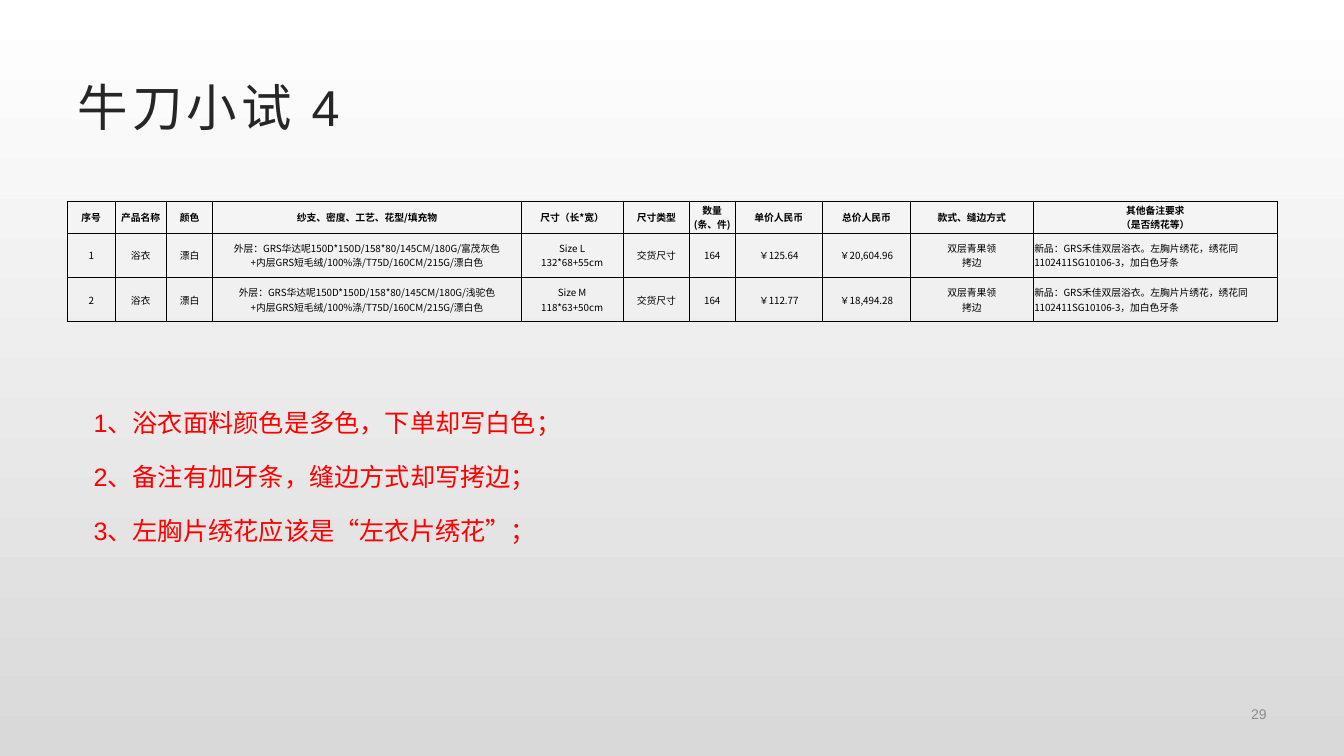
from lxml.etree import SubElement
from pptx import Presentation
from pptx.dml.color import RGBColor
from pptx.enum.text import MSO_ANCHOR, PP_ALIGN
from pptx.oxml.ns import qn
from pptx.util import Inches, Pt

COLORS = {"top": "FFFFFF", "base": "D9D9D9", "title": "262626",
          "note": "FF0000", "page": "8C8C8C", "ink": "000000"}
HEAD = ["序号", "产品名称", "颜色", "纱支、密度、工艺、花型/填充物", "尺寸（长*宽）",
        "尺寸类型", "数量\n(条、件)", "单价人民币", "总价人民币", "款式、缝边方式",
        "其他备注要求\n（是否绣花等）"]
# Colour, size, unit price, total price, embroidered part
ROBES = [
    ("富茂灰色", "Size L\n132*68+55cm", "￥125.64", "￥20,604.96", "左胸片"),
    ("浅驼色", "Size M\n118*63+50cm", "￥112.77", "￥18,494.28", "左胸片片"),
]
WIDTHS = [0.47, 0.51, 0.46, 3.06, 1.01, 0.66, 0.45, 0.87, 0.87, 1.22, 2.42]
HEIGHTS = [0.31, 0.44, 0.44]
NOTES = ["1、浴衣面料颜色是多色，下单却写白色；",
         "2、备注有加牙条，缝边方式却写拷边；",
         "3、左胸片绣花应该是“左衣片绣花”；"]


def rgb(name):
    return RGBColor.from_string(COLORS[name])


def style(para, size, color, face="Arial", bold=False, align=PP_ALIGN.LEFT):
    para.alignment = align
    font = para.font
    font.size, font.name, font.bold = Pt(size), face, bold
    font.color.rgb = rgb(color)
    props = para._p.pPr.find(qn("a:defRPr"))
    SubElement(props, qn("a:ea"), typeface="Noto Sans CJK SC")
    return props


def paint_back(slide):
    fill = slide.background.fill
    fill.gradient()
    fill.gradient_angle = 270
    for stop, name, pos in zip(fill.gradient_stops, ("top", "base"), (0, 1)):
        stop.color.rgb = rgb(name)
        stop.position = pos


def add_title(slide, text):
    title = slide.shapes.title
    title.left, title.top = Inches(0.67), Inches(0.67)
    title.width, title.height = Inches(12), Inches(0.77)
    title.text_frame.vertical_anchor = MSO_ANCHOR.MIDDLE
    para = title.text_frame.paragraphs[0]
    para.text = text
    style(para, 36, "title").set("spc", "300")


def add_text(slide, box, lines, size, color, align=PP_ALIGN.LEFT,
             anchor=MSO_ANCHOR.TOP, gap=0):
    frame = slide.shapes.add_textbox(*map(Inches, box)).text_frame
    frame.word_wrap = True
    frame.vertical_anchor = anchor
    for i, line in enumerate(lines):
        para = frame.add_paragraph() if i else frame.paragraphs[0]
        para.text = line
        para.space_before = Pt(gap if i else 0)
        style(para, size, color, align=align)


def add_edges(cell):
    """Draw a thin line on all four sides of a cell."""
    props = cell._tc.get_or_add_tcPr()
    for side in ("lnL", "lnR", "lnT", "lnB"):
        line = SubElement(props, qn(f"a:{side}"), w=str(Pt(0.5)))
        fill = SubElement(line, qn("a:solidFill"))
        SubElement(fill, qn("a:srgbClr"), val=COLORS["ink"])


def fill_cell(cell, text, bold, align):
    add_edges(cell)
    cell.fill.background()
    cell.vertical_anchor = MSO_ANCHOR.MIDDLE
    cell.margin_left = cell.margin_right = cell.margin_top = Inches(0.01)
    cell.margin_bottom = 0
    para = cell.text_frame.paragraphs[0]
    para.text = text
    style(para, 7, "ink", "Noto Sans CJK SC", bold, align)


def robe_row(num, shade, size, price, total, part):
    cloth = (f"外层：GRS华达呢150D*150D/158*80/145CM/180G/{shade}\n"
             "+内层GRS短毛绒/100%涤/T75D/160CM/215G/漂白色")
    remark = f"新品：GRS禾佳双层浴衣。{part}绣花，绣花同1102411SG10106-3，加白色牙条"
    return [str(num), "浴衣", "漂白", cloth, size, "交货尺寸", "164",
            price, total, "双层青果领\n拷边", remark]


def add_order(slide):
    rows = [HEAD] + [robe_row(i, *robe) for i, robe in enumerate(ROBES, 1)]
    table = slide.shapes.add_table(
        len(rows), len(HEAD), Inches(0.67), Inches(2),
        Inches(sum(WIDTHS)), Inches(sum(HEIGHTS))).table
    table.first_row = table.horz_banding = False
    for col, width in zip(table.columns, WIDTHS):
        col.width = Inches(width)
    for r, (row, height) in enumerate(zip(rows, HEIGHTS)):
        table.rows[r].height = Inches(height)
        for c, text in enumerate(row):
            remark = r > 0 and c == len(HEAD) - 1
            align = PP_ALIGN.LEFT if remark else PP_ALIGN.CENTER
            fill_cell(table.cell(r, c), text, r == 0, align)


def main():
    deck = Presentation()
    deck.slide_width, deck.slide_height = Inches(13.33), Inches(7.5)
    slide = deck.slides.add_slide(deck.slide_layouts[5])
    paint_back(slide)
    add_title(slide, "牛刀小试 4")
    add_text(slide, (9.71, 6.91, 2.95, 0.35), ["29"], 10, "page",
             PP_ALIGN.RIGHT, MSO_ANCHOR.MIDDLE)
    add_text(slide, (0.83, 3.99, 7.54, 1.61), NOTES, 18, "note", gap=17)
    add_order(slide)
    deck.save("out.pptx")


if __name__ == "__main__":
    main()
